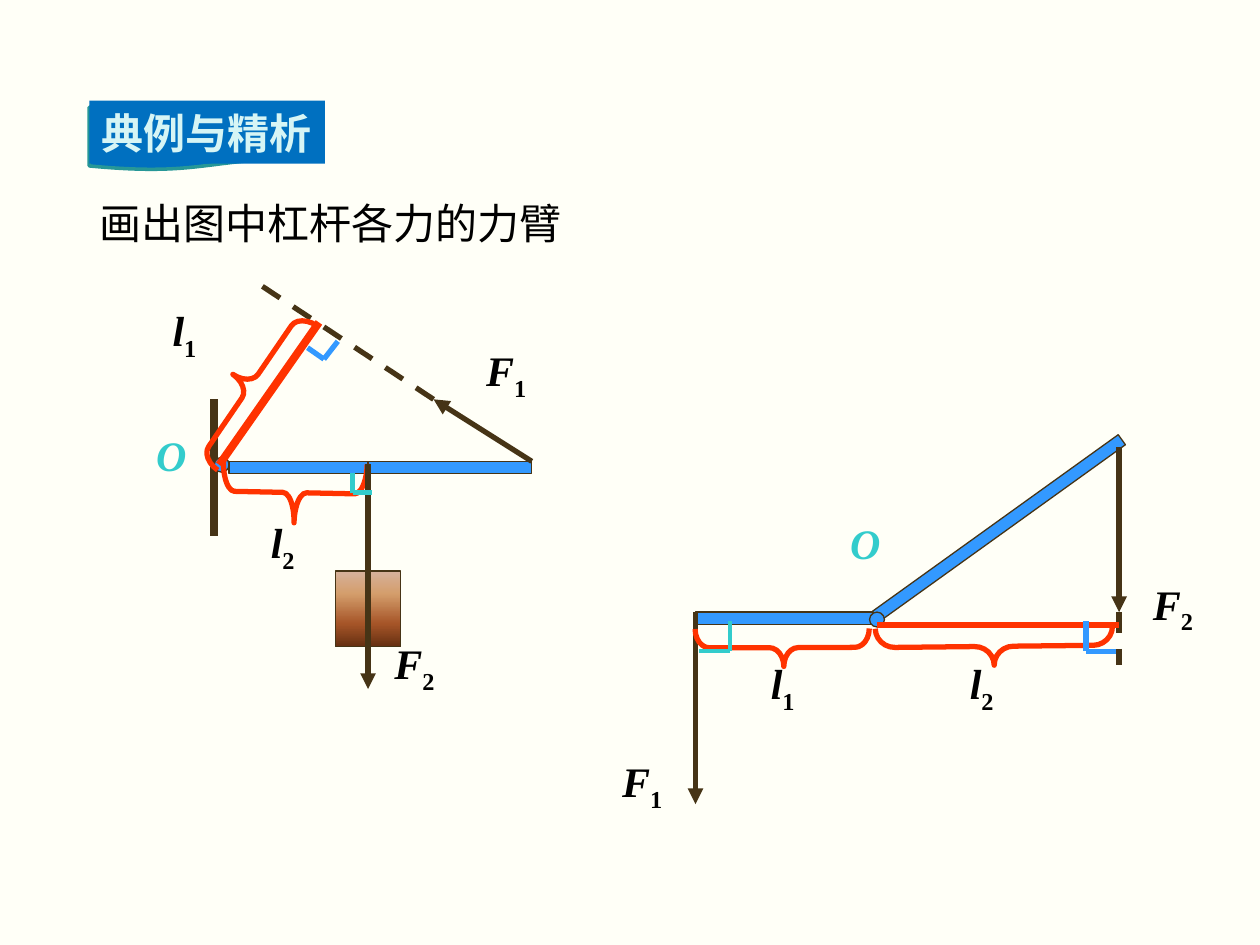
"""Draw the lever exercise slide with forces, arms and labels."""
from dataclasses import dataclass
from itertools import pairwise
from typing import Optional

from lxml import etree
from pptx import Presentation
from pptx import util as u
from pptx.dml.color import RGBColor
from pptx.enum import dml, shapes, text
from pptx.oxml import ns

BROWN, BLUE, TEAL, RED, BLACK = "463416", "3399FF", "33CCCC", "FF3300", "000000"
SERIF, CJK = "Times New Roman", "Noto Sans CJK SC"
SHAPE = shapes.MSO_SHAPE
Point = tuple[float, float]


@dataclass
class Body:
    kind: SHAPE
    x: float
    y: float
    w: float
    h: float
    rotation: float = 0
    fill: Optional[str] = BLUE
    line: Optional[str] = BROWN
    width: float = 0.75


@dataclass
class Line:
    start: Point
    end: Point
    color: str = BROWN
    width: float = 3
    arrow: bool = False
    dashed: bool = False


@dataclass
class Brace:
    x: float
    y: float
    w: float
    h: float
    rotation: float
    curve: float
    middle: float = 0.5


@dataclass
class Label:
    x: float
    y: float
    w: float
    letter: str
    index: str = ""
    color: str = BLACK


@dataclass
class RightAngle:
    points: tuple[Point, Point, Point]
    color: str
    width: float = 3


WALL = Line((4.32, 8.05), (4.32, 10.8), width=4.5)
LEFT_LEVER = [
    Body(SHAPE.OVAL, 4.32, 9.22, 0.3, 0.3),
    Body(SHAPE.RECTANGLE, 4.62, 9.3, 6.1, 0.25),
]
WEIGHT = Body(SHAPE.RECTANGLE, 6.76, 11.51, 1.32, 1.52)
WEIGHT_STOPS = [(0, "D6B19C"), (30, "D49E6C"), (70, "A65528"), (100, "663012")]
ROPE = Line((7.42, 9.3), (7.42, 11.51), width=0.75)
RIGHT_LEVER = [
    Body(SHAPE.RECTANGLE, 14.02, 12.34, 3.66, 0.25),
    Body(SHAPE.RECTANGLE, 17.09, 10.52, 6.1, 0.25, 324.3),
    Body(SHAPE.OVAL, 17.53, 12.34, 0.3, 0.3),
]
FORCES = [
    Line((10.72, 9.3), (8.74, 8.05), arrow=True),
    Line((8.74, 8.05), (5.21, 5.72), dashed=True),
    Line((14.02, 12.34), (14.02, 16.21), arrow=True),
    Line((22.56, 9.02), (22.56, 12.34), arrow=True),
    Line((22.56, 12.34), (22.56, 13.41), dashed=True),
]
BRACES = [
    Brace(4.62, 6.02, 0.84, 3.53, 34.4, 0.345),
    Brace(5.33, 8.48, 1.22, 2.9, 271.2, 0.196),
    Brace(15.39, 11.3, 0.76, 3.51, 269.8, 0.386, 0.509),
    Brace(19.66, 10.64, 0.76, 4.78, 269.4, 0.517),
]
ARMS_AND_LOAD = [
    Line((6.43, 6.5), (4.42, 9.37), RED, 4.5),
    Line((17.68, 12.6), (22.56, 12.6), RED),
    Line((7.42, 9.35), (7.42, 13.89), arrow=True),
]
RIGHT_ANGLES = [
    RightAngle(((6.2, 7.01), (6.53, 7.24), (6.81, 6.88)), BLUE),
    RightAngle(((7.11, 9.53), (7.11, 9.93), (7.49, 9.93)), TEAL),
    RightAngle(((14.1, 13.13), (14.71, 13.13), (14.71, 12.52)), TEAL, 2.25),
    RightAngle(((21.89, 12.52), (21.89, 13.13), (22.5, 13.13)), BLUE),
]
LABELS = [
    Label(9.55, 6.83, 1.35, "F", "1"),
    Label(7.7, 12.73, 1.35, "F", "2"),
    Label(12.29, 15.11, 1.35, "F", "1"),
    Label(22.99, 11.53, 1.35, "F", "2"),
    Label(3.23, 6.02, 1.02, "l", "1"),
    Label(5.21, 10.29, 1.02, "l", "2"),
    Label(15.29, 13.13, 1.02, "l", "1"),
    Label(19.3, 13.13, 1.02, "l", "2"),
    Label(16.89, 10.31, 1.12, "O", color=TEAL),
    Label(2.9, 8.53, 1.8, "O", color=TEAL),
]


def paint(target, color: str) -> None:
    """Make a fill solid in the given colour."""
    target.solid()
    target.fore_color.rgb = RGBColor.from_string(color)


def draw_body(s, b: Body):
    """Add a preset shape with optional fill and outline."""
    sp = s.shapes.add_shape(b.kind, *map(u.Cm, (b.x, b.y, b.w, b.h)))
    sp.shadow.inherit = False
    sp.rotation = b.rotation
    if b.fill:
        paint(sp.fill, b.fill)
    else:
        sp.fill.background()
    paint(sp.line.fill, b.line)
    sp.line.width = u.Pt(b.width)
    return sp


def draw_weight(s):
    """Add the hanging block with its vertical gradient."""
    sp = draw_body(s, WEIGHT)
    sp.fill.gradient()
    sp.fill.gradient_angle = 270
    stops = sp.element.spPr.find(".//" + ns.qn("a:gsLst"))
    for old in list(stops):
        stops.remove(old)
    for percent, color in WEIGHT_STOPS:
        gs = etree.SubElement(stops, ns.qn("a:gs"), pos=str(percent * 1000))
        etree.SubElement(gs, ns.qn("a:srgbClr"), val=color)
    return sp


def draw_line(s, item: Line):
    """Add a straight connector, dashed or with an arrowhead if asked."""
    ends = map(u.Cm, (*item.start, *item.end))
    c = s.shapes.add_connector(shapes.MSO_CONNECTOR.STRAIGHT, *ends)
    paint(c.line.fill, item.color)
    c.line.width = u.Pt(item.width)
    if item.dashed:
        c.line.dash_style = dml.MSO_LINE.DASH
    if item.arrow:
        etree.SubElement(c.line._get_or_add_ln(), ns.qn("a:tailEnd"), type="triangle")
    etree.SubElement(c.element.spPr, ns.qn("a:effectLst"))
    return c


def draw_brace(s, b: Brace) -> None:
    """Add a red brace measuring a force arm."""
    sp = draw_body(s, Body(SHAPE.LEFT_BRACE, b.x, b.y, b.w, b.h, b.rotation, None, RED, 3))
    sp.adjustments[0], sp.adjustments[1] = b.curve, b.middle


def draw_right_angle(s, mark: RightAngle) -> None:
    """Add the two strokes of a right-angle mark."""
    for start, end in pairwise(mark.points):
        draw_line(s, Line(start, end, mark.color, mark.width))


def style(r, color: str, name: str = SERIF, bold: bool = False, italic: bool = False) -> None:
    """Format a run at the common text size."""
    r.font.size, r.font.name = u.Pt(24), name
    r.font.bold, r.font.italic = bold, italic
    paint(r.font.fill, color)


def add_text(s, x: float, y: float, w: float):
    """Add an unwrapped one-line text box and return its paragraph."""
    tf = s.shapes.add_textbox(*map(u.Cm, (x, y, w, 1.27))).text_frame
    tf.word_wrap = False
    tf.auto_size = text.MSO_AUTO_SIZE.SHAPE_TO_FIT_TEXT
    return tf.paragraphs[0]


def draw_label(s, item: Label) -> None:
    """Add an italic letter with an optional subscript."""
    p = add_text(s, item.x, item.y, item.w)
    r = p.add_run()
    r.text = item.letter
    style(r, item.color, bold=True, italic=True)
    if item.index:
        r = p.add_run()
        r.text = item.index
        style(r, item.color, bold=True)
        r.font._element.set("baseline", "-25000")


def draw_heading(s) -> None:
    """Format the title as a banner over its curled backing."""
    sp = s.shapes.title
    backing = Body(SHAPE.FLOWCHART_DOCUMENT, 1.8, 2.16, 4.65, 1.27, 0, "0070C0", "269797", 2)
    sp.element.addprevious(draw_body(s, backing).element)
    sp.left, sp.top, sp.width, sp.height = map(u.Cm, (1.8, 2.03, 4.75, 1.27))
    paint(sp.fill, "0070C0")
    tf = sp.text_frame
    tf.text = "典例与精析"
    tf.word_wrap, tf.auto_size = False, text.MSO_AUTO_SIZE.NONE
    tf.vertical_anchor = text.MSO_ANCHOR.MIDDLE
    p = tf.paragraphs[0]
    p.alignment = text.PP_ALIGN.LEFT
    r = p.runs[0]
    style(r, "D6F5F5", CJK, bold=True)
    etree.SubElement(r.font._element, ns.qn("a:ea"), typeface=CJK)


def main() -> None:
    """Build and save the slide."""
    prs = Presentation()
    prs.slide_width, prs.slide_height = u.Cm(25.4), u.Cm(19.05)
    s = prs.slides.add_slide(prs.slide_layouts[5])
    paint(s.background.fill, "FFFFF7")
    draw_heading(s)
    p = add_text(s, 1.75, 3.86, 9.83)
    p.text = "画出图中杠杆各力的力臂"
    style(p.runs[0], BLACK)
    draw_line(s, WALL)
    for b in LEFT_LEVER:
        draw_body(s, b)
    rope = draw_line(s, ROPE)
    rope.end_connect(draw_weight(s), 0)
    for b in RIGHT_LEVER:
        draw_body(s, b)
    for draw, items in (
        (draw_line, FORCES),
        (draw_brace, BRACES),
        (draw_line, ARMS_AND_LOAD),
        (draw_right_angle, RIGHT_ANGLES),
        (draw_label, LABELS),
    ):
        for item in items:
            draw(s, item)
    prs.save("out.pptx")


if __name__ == "__main__":
    main()
